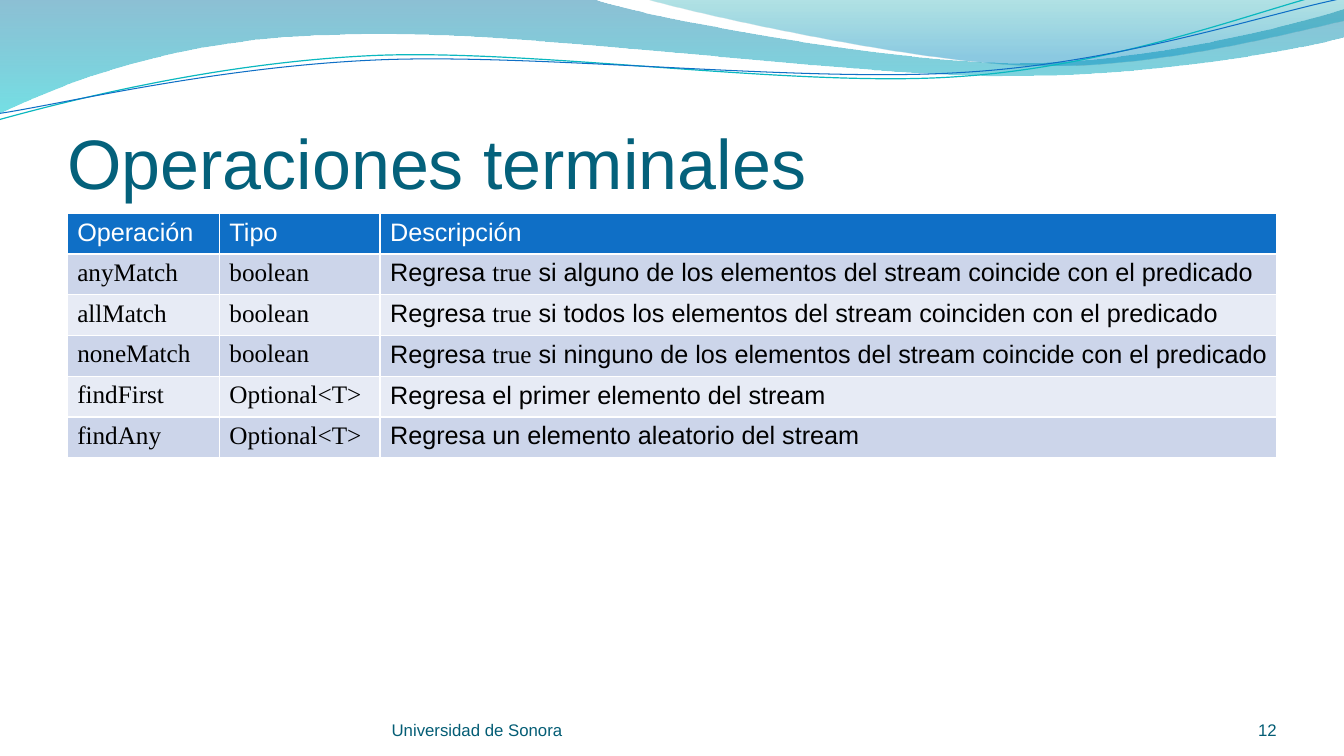
"""Build the slide about terminal stream operations."""
import dataclasses

import pptx
import pptx.dml.color
import pptx.enum.text
import pptx.oxml
import pptx.oxml.ns
import pptx.util

SCALE = 9525
DRAWING = pptx.oxml.ns.nsdecls("a")


@dataclasses.dataclass(frozen=True)
class Theme:
    """Hold the colours, fonts and type sizes."""
    sans: str = "Arial"
    serif: str = "Times New Roman"
    title: str = "04617B"
    foot: str = "045D75"
    head: str = "0F6FC6"
    teal: str = "0AB8BF"
    white: str = "FFFFFF"
    black: str = "000000"
    bands: tuple = ("CCD5EA", "E7EBF5")
    big: int = 50
    body: int = 18
    small: int = 12


THEME = Theme()
ROWS = (
    ("anyMatch", "boolean",
     ("Regresa ", "true", " si alguno de los elementos del stream coincide con el predicado")),
    ("allMatch", "boolean",
     ("Regresa ", "true", " si todos los elementos del stream coinciden con el predicado")),
    ("noneMatch", "boolean",
     ("Regresa ", "true", " si ninguno de los elementos del stream coincide con el predicado")),
    ("findFirst", "Optional<T>", ("Regresa el primer elemento del stream",)),
    ("findAny", "Optional<T>", ("Regresa un elemento aleatorio del stream",)),
)


def px(count):
    """Turn px into EMU."""
    return pptx.util.Emu(count * SCALE)


def rgb(code):
    """Make a colour from its hex code."""
    return pptx.dml.color.RGBColor.from_string(code)


def style(font, name, size, color):
    """Set the face, size and colour of a font."""
    font.name = name
    font.size = pptx.util.Pt(size)
    font.color.rgb = rgb(color)


def trace(slide, start, steps, close):
    """Draw an outline whose steps are lines of one point or curves of three."""
    pen = slide.shapes.build_freeform(*start, scale=SCALE)
    pen.add_line_segments([point for step in steps for point in step], close=close)
    shape = pen.convert_to_shape()
    shape.shadow.inherit = False
    lines = iter(list(shape.element.spPr.iter(pptx.oxml.ns.qn("a:lnTo"))))
    for step in steps:
        group = [next(lines) for _ in step]
        if len(group) == 3:
            bend = pptx.oxml.parse_xml(f"<a:cubicBezTo {DRAWING}/>")
            group[0].addprevious(bend)
            for line in group:
                bend.append(line[0])
                line.getparent().remove(line)
    return shape


def wave(slide, start, steps, stops):
    """Draw a filled wave that fades downwards between two stops."""
    shape = trace(slide, start, steps, True)
    shape.line.fill.background()
    shape.fill.gradient()
    shape.fill.gradient_angle = 270
    for stop, (place, color, _) in zip(shape.fill.gradient_stops, stops):
        stop.position = place
        stop.color.rgb = rgb(color)
    tints = shape.element.spPr.iter(pptx.oxml.ns.qn("a:srgbClr"))
    for tint, (_, _, alpha) in zip(tints, stops):
        tint.append(pptx.oxml.parse_xml(f'<a:alpha {DRAWING} val="{alpha * 1000}"/>'))


def strand(slide, start, steps, color, width):
    """Draw a thin curved line."""
    shape = trace(slide, start, steps, False)
    shape.fill.background()
    shape.line.color.rgb = rgb(color)
    shape.line.width = pptx.util.Pt(width)


def label(slide, text, box, size, color, align="LEFT", base=0):
    """Write one line of text at the bottom of a box."""
    frame = slide.shapes.add_textbox(*map(px, box)).text_frame
    frame.word_wrap = True
    frame.vertical_anchor = pptx.enum.text.MSO_ANCHOR.BOTTOM
    frame.margin_left = frame.margin_right = frame.margin_bottom = 0
    frame.margin_top = px(base)
    line = frame.paragraphs[0]
    line.text = text
    line.alignment = pptx.enum.text.PP_ALIGN[align]
    style(line.font, THEME.sans, size, color)


def paint(cell, fill):
    """Give a cell its white borders and its fill."""
    props = cell._tc.get_or_add_tcPr()
    for side in "LRTB":
        props.append(pptx.oxml.parse_xml(
            f'<a:ln{side} {DRAWING} w="12700"><a:solidFill>'
            f'<a:srgbClr val="{THEME.white}"/></a:solidFill></a:ln{side}>'))
    cell.fill.solid()
    cell.fill.fore_color.rgb = rgb(fill)
    cell.margin_right = px(4)


def write(cell, parts, face, color):
    """Fill a cell with text whose second part, if any, is code."""
    line = cell.text_frame.paragraphs[0]
    style(line.font, face, THEME.body, color)
    for index, part in enumerate(parts):
        run = line.add_run()
        run.text = part
        if len(parts) > 1:
            run.font.name = THEME.serif if index == 1 else THEME.sans


def grid(slide):
    """Lay out the table of operations."""
    widths = (145, 153, 854)
    frame = slide.shapes.add_table(len(ROWS) + 1, len(widths),
                                   *map(px, (64, 203, sum(widths), 233)))
    table = frame.table
    table.first_row = table.horz_banding = False
    for column, width in zip(table.columns, widths):
        column.width = px(width)
    for column, text in enumerate(("Operación", "Tipo", "Descripción")):
        cell = table.cell(0, column)
        paint(cell, THEME.head)
        write(cell, (text,), THEME.sans, THEME.white)
    for row, (name, kind, about) in enumerate(ROWS, 1):
        fields = (((name,), THEME.serif), ((kind,), THEME.serif), (about, THEME.sans))
        for column, (parts, face) in enumerate(fields):
            cell = table.cell(row, column)
            paint(cell, THEME.bands[(row - 1) % 2])
            write(cell, parts, face, THEME.black)


def waves(slide):
    """Draw the band of waves along the top."""
    wave(slide, (0, 0), (
        ((564, -1),),
        ((609, 16), (850, 60), (971, 60)),
        ((1092, 60), (1227, 25), (1280, 9)),
        ((1282, 35),),
        ((1259, 42), (1114, 73), (954, 72)),
        ((796, 72), (489, 27), (329, 33)),
        ((165, 35), (59, 80), (-1, 108)),
    ), ((0, "0074A1", 45), (1, "00C6CF", 55)))
    wave(slide, (613, -1), (
        ((652, 11), (873, 60), (984, 62)),
        ((1095, 66), (1231, 31), (1280, 20)),
        ((1280, 0),),
    ), ((0, "00A1A9", 30), (0.8, "008BBF", 45)))
    strand(slide, (-1, 114), (
        ((61, 97), (203, 60), (354, 53)),
        ((506, 46), (758, 84), (912, 73)),
        ((1066, 63), (1202, 8), (1278, -10)),
    ), THEME.teal, 0.85)
    strand(slide, (0, 108), (
        ((60, 99), (209, 63), (363, 57)),
        ((516, 51), (764, 79), (917, 69)),
        ((1070, 60), (1205, 13), (1281, -2)),
    ), THEME.head, 0.75)


def main():
    """Build and save the slide."""
    deck = pptx.Presentation()
    deck.slide_width, deck.slide_height = px(1280), px(720)
    slide = deck.slides.add_slide(deck.slide_layouts[6])
    waves(slide)
    label(slide, "Operaciones terminales", (64, 74, 1152, 120), THEME.big, THEME.title, base=5)
    grid(slide)
    label(slide, "Universidad de Sonora", (373, 667, 469, 38), THEME.small, THEME.foot)
    label(slide, "12", (1109, 667, 107, 38), THEME.small, THEME.foot, "RIGHT")
    deck.save("out.pptx")


if __name__ == "__main__":
    main()
